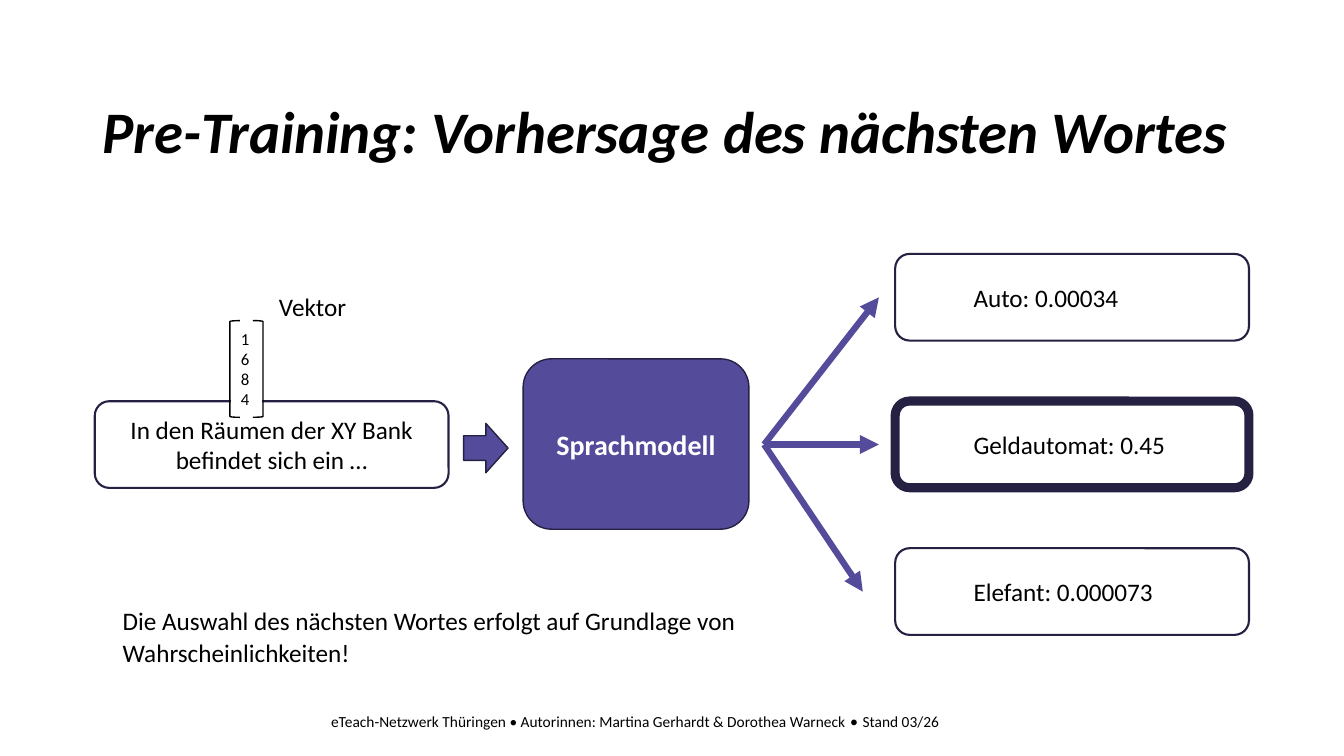
from lxml import etree
from pptx import Presentation
from pptx.dml.color import RGBColor
from pptx.enum.shapes import MSO_CONNECTOR, MSO_SHAPE
from pptx.enum.text import MSO_ANCHOR, MSO_AUTO_SIZE, PP_ALIGN
from pptx.oxml.ns import qn
from pptx.util import Pt

COLORS = {"violet": "544B9A", "navy": "252143", "black": "000000", "white": "FFFFFF"}


def color(name):
    return RGBColor.from_string(COLORS[name])


def add_run(para, text, size, tint="black", bold=False, italic=False, face="Calibri"):
    run = para.add_run()
    run.text = text
    font = run.font
    font.name, font.size = face, Pt(size)
    font.bold, font.italic = bold, italic
    font.color.rgb = color(tint)


def set_frame(shape, anchor=MSO_ANCHOR.TOP):
    frame = shape.text_frame
    frame.word_wrap = True
    frame.auto_size = MSO_AUTO_SIZE.NONE
    frame.vertical_anchor = anchor
    return frame


def add_label(slide, box, text=None, size=18, anchor=MSO_ANCHOR.TOP):
    """Place a text box and return its first paragraph."""
    shape = slide.shapes.add_textbox(*map(Pt, box))
    para = set_frame(shape, anchor).paragraphs[0]
    if text:
        add_run(para, text, size)
    return para


def add_block(slide, kind, box, fill=None, line="navy", width=1.0):
    shape = slide.shapes.add_shape(kind, *map(Pt, box))
    shape.shadow.inherit = False
    if fill:
        shape.fill.solid()
        shape.fill.fore_color.rgb = color(fill)
    else:
        shape.fill.background()
    if line:
        shape.line.color.rgb = color(line)
        shape.line.width = Pt(width)
    else:
        shape.line.fill.background()
    return shape


def add_caption(shape, text, size, tint="black", bold=False):
    para = set_frame(shape, MSO_ANCHOR.MIDDLE).paragraphs[0]
    para.alignment = PP_ALIGN.CENTER
    add_run(para, text, size, tint, bold)


def add_arrow(slide, start, end):
    line = slide.shapes.add_connector(MSO_CONNECTOR.STRAIGHT, *map(Pt, start + end))
    line.line.color.rgb = color("violet")
    line.line.width = Pt(4.5)
    etree.SubElement(line.line._get_or_add_ln(), qn("a:tailEnd"), type="triangle")
    etree.SubElement(line._element.spPr, qn("a:effectLst"))


def add_title(slide, text):
    title = slide.shapes.title
    title.left, title.top, title.width, title.height = map(Pt, (66, 69.9, 828, 95.8))
    para = set_frame(title).paragraphs[0]
    para.alignment = PP_ALIGN.LEFT
    para.line_spacing = 0.9
    add_run(para, text, 42, bold=True, italic=True)


def add_vector(slide, digits):
    box = add_block(slide, MSO_SHAPE.RECTANGLE, (164.9, 231.1, 22.3, 65.5), "white", None)
    frame = set_frame(box)
    for i, digit in enumerate(digits):
        para = frame.add_paragraph() if i else frame.paragraphs[0]
        para.alignment = PP_ALIGN.LEFT
        add_run(para, digit, 12)
    for left, turn in ((180.7, 0), (164.2, 180)):
        mark = add_block(slide, MSO_SHAPE.RIGHT_BRACKET, (left, 229, 7.2, 69.1), line="black")
        mark.rotation = turn
    add_label(slide, (192.2, 204.5, 78.5, 29), "Vektor")


def add_words(slide):
    """Stack the candidate words, each with an arrow from the model."""
    words = (("Auto: 0.00034", 1.5, 627.8),
             ("Geldautomat: 0.45", 6.5, 627.8),
             ("Elefant: 0.000073", 1.5, 616.3))
    for i, (text, width, tip) in enumerate(words):
        top = 181.4 + i * 105.1
        box = add_block(slide, MSO_SHAPE.ROUNDED_RECTANGLE, (639.4, top, 252.7, 61.9), width=width)
        box.adjustments[0] = 0.167
        add_label(slide, (688.3, top + 16.4, 155.5, 29), text)
        add_arrow(slide, (545.8, 317.5), (tip, top + 31))


def main():
    deck = Presentation()
    deck.slide_width, deck.slide_height = Pt(960), Pt(540)
    slide = deck.slides.add_slide(deck.slide_layouts[5])

    # Title and footer
    add_title(slide, "Pre-Training: Vorhersage des nächsten Wortes")
    foot = add_label(slide, (191.5, 501.1, 524.2, 28.8), anchor=MSO_ANCHOR.MIDDLE)
    foot.alignment = PP_ALIGN.CENTER
    add_run(foot, "eTeach-Netzwerk Thüringen • Autorinnen: Martina Gerhardt & Dorothea Warneck ", 11)
    add_run(foot, "• ", 11, face="Lato")
    add_run(foot, "Stand 03/26", 11)

    # Input, model and the arrow between them
    model = add_block(slide, MSO_SHAPE.ROUNDED_RECTANGLE, (373.7, 256.3, 161.3, 121.7), "violet")
    add_caption(model, "Sprachmodell", 20, "white", True)
    query = add_block(slide, MSO_SHAPE.ROUNDED_RECTANGLE, (67.7, 286.6, 252.7, 61.9), width=1.5)
    add_caption(query, "In den Räumen der XY Bank befindet sich ein …", 18)
    add_block(slide, MSO_SHAPE.RIGHT_ARROW, (331.2, 302.4, 31.7, 35.3), "violet")

    # Candidate words and vector
    add_words(slide)
    add_vector(slide, "1684")

    # Remark
    note = add_label(slide, (80.6, 427, 480.2, 52.6),
                     "Die Auswahl des nächsten Wortes erfolgt auf Grundlage von Wahrscheinlichkeiten!")
    note.line_spacing = 1.07
    note.space_after = Pt(8)

    deck.save("out.pptx")


if __name__ == "__main__":
    main()
